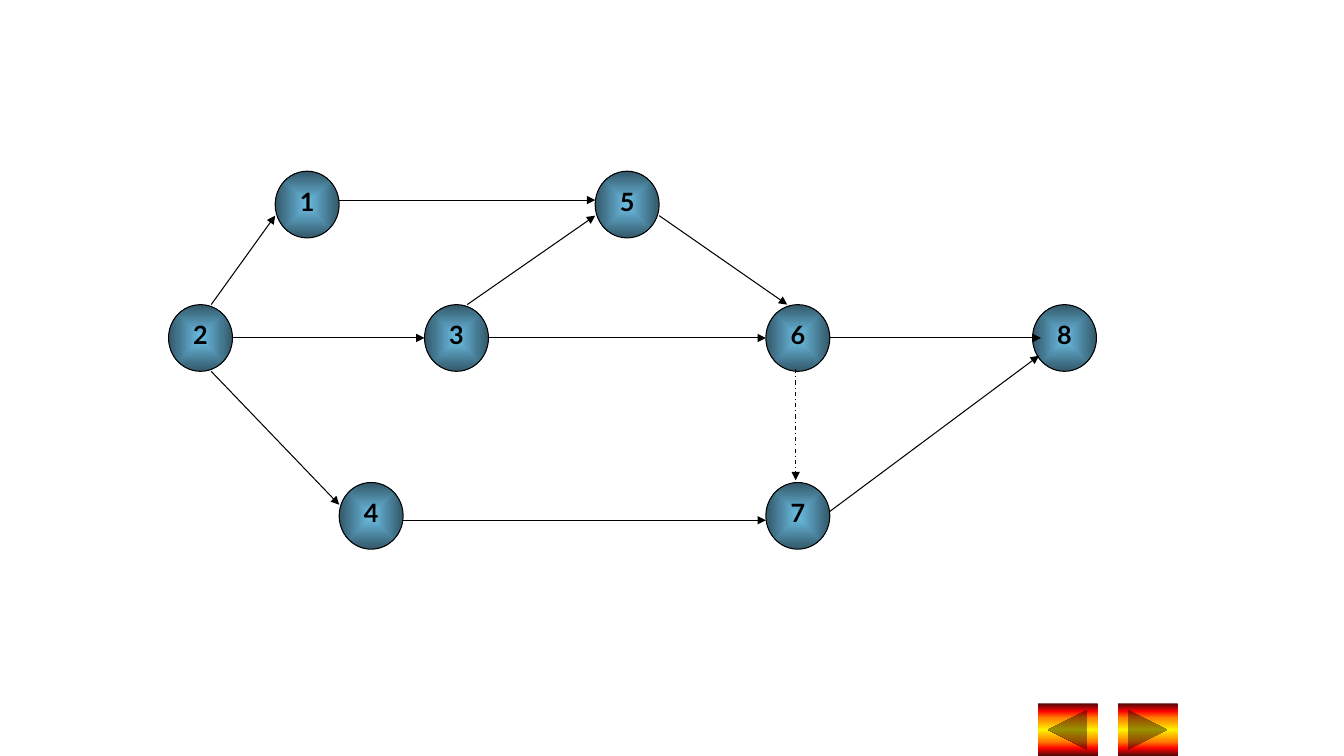
from pptx import Presentation
from pptx import util as u
from pptx.dml.color import RGBColor
from pptx.enum import dml, shapes, text
from pptx.oxml import parse_xml
from pptx.oxml.ns import nsdecls, qn

COLORS = {
    "ink": "000000", "sky": "6CBDE2", "deep": "325769",
    "maroon": "4D0808", "red": "FF0300", "orange": "FF7A00", "yellow": "FFF200",
}
RADIAL = '<a:path path="shape"><a:fillToRect l="50000" t="50000" r="50000" b="50000"/></a:path>'
VERTICAL = '<a:lin ang="5400000" scaled="1"/>'
BALL = [(0, "sky"), (100, "deep")]
FLAME = [(0, "maroon"), (15, "red"), (27, "orange"), (50, "yellow"),
         (73, "orange"), (85, "red"), (100, "maroon")]

NODES = {"1": (5, 0), "2": (0, 6), "3": (12, 6), "4": (8, 14),
         "5": (20, 0), "7": (28, 14), "6": (28, 6), "8": (40.5, 6)}
ARROWS = [
    ((2, 6), (5, 2)), ((2, 9), (8, 15)),
    ((3, 7.5), (12, 7.5)), ((15, 7.5), (28, 7.5)),
    ((11, 15.7), (28, 15.7)), ((31, 15.3), (40.8, 8.3)),
    ((31, 7.5), (40.9, 7.5)), ((8, 1.3), (20, 1.3)),
    ((14, 6), (20, 2)), ((23, 2), (29, 6)),
]
DUMMY_ARROW = ((29.4, 8.9), (29.4, 13.9))
BUTTONS = [(shapes.MSO_SHAPE.ACTION_BUTTON_FORWARD_OR_NEXT, 44.5),
           (shapes.MSO_SHAPE.ACTION_BUTTON_BACK_OR_PREVIOUS, 40.75)]


def color(name):
    return RGBColor.from_string(COLORS[name])


def write(box, words, size=18, font="Lato", ink="ink", bold=True):
    frame = box.text_frame
    frame.word_wrap = True
    frame.vertical_anchor = text.MSO_ANCHOR.TOP
    para = frame.paragraphs[0]
    para.alignment = text.PP_ALIGN.CENTER
    span = para.add_run()
    span.text = words
    span.font.size = u.Pt(size)
    span.font.name = font
    span.font.bold = bold
    span.font.color.rgb = color(ink)


class NetworkSlide:
    """Draws a network on a grid of 63 columns by 34 rows, offset from the corner."""

    columns, rows = 63, 34
    left, top = 7.9, 7.7
    stroke = u.Pt(0.75)

    def __init__(self, deck):
        self.slide = deck.slides.add_slide(deck.slide_layouts[6])
        self.column = deck.slide_width / self.columns
        self.row = deck.slide_height / self.rows

    def point(self, x, y):
        return round((self.left + x) * self.column), round((self.top + y) * self.row)

    def shape(self, kind, at, size, stops, direction):
        width, height = round(size[0] * self.column), round(size[1] * self.row)
        box = self.slide.shapes.add_shape(kind, *self.point(*at), width, height)
        box.shadow.inherit = False
        box.fill.gradient()
        marks = "".join(
            f'<a:gs pos="{share * 1000}"><a:srgbClr val="{COLORS[name]}"/></a:gs>'
            for share, name in stops)
        gradient = parse_xml(
            f'<a:gradFill {nsdecls("a")} rotWithShape="1">'
            f'<a:gsLst>{marks}</a:gsLst>{direction}</a:gradFill>')
        properties = box._element.spPr
        properties.replace(properties.find(qn("a:gradFill")), gradient)
        return box

    def node(self, label, at):
        ball = self.shape(shapes.MSO_SHAPE.OVAL, at, (3, 3), BALL, RADIAL)
        ball.line.color.rgb = color("ink")
        ball.line.width = self.stroke
        write(ball, label)

    def button(self, kind, x):
        box = self.shape(kind, (x, 23.94), (2.8, 2.36), FLAME, VERTICAL)
        box.line.fill.background()

    def arrow(self, start, end, dash=None):
        link = self.slide.shapes.add_connector(
            shapes.MSO_CONNECTOR.STRAIGHT, *self.point(*start), *self.point(*end))
        link.line.color.rgb = color("ink")
        link.line.width = self.stroke
        if dash:
            link.line.dash_style = dash
        link.line._get_or_add_ln().append(
            parse_xml(f'<a:tailEnd {nsdecls("a")} type="triangle"/>'))
        link._element.spPr.append(parse_xml(f'<a:effectLst {nsdecls("a")}/>'))


def main():
    deck = Presentation()
    deck.slide_width, deck.slide_height = u.Inches(13.33), u.Inches(7.5)
    network = NetworkSlide(deck)
    for label, at in NODES.items():
        network.node(label, at)
    for start, end in ARROWS:
        network.arrow(start, end)
    network.arrow(*DUMMY_ARROW, dash=dml.MSO_LINE.DASH_DOT)
    for kind, x in BUTTONS:
        network.button(kind, x)
    deck.save("out.pptx")


if __name__ == "__main__":
    main()
